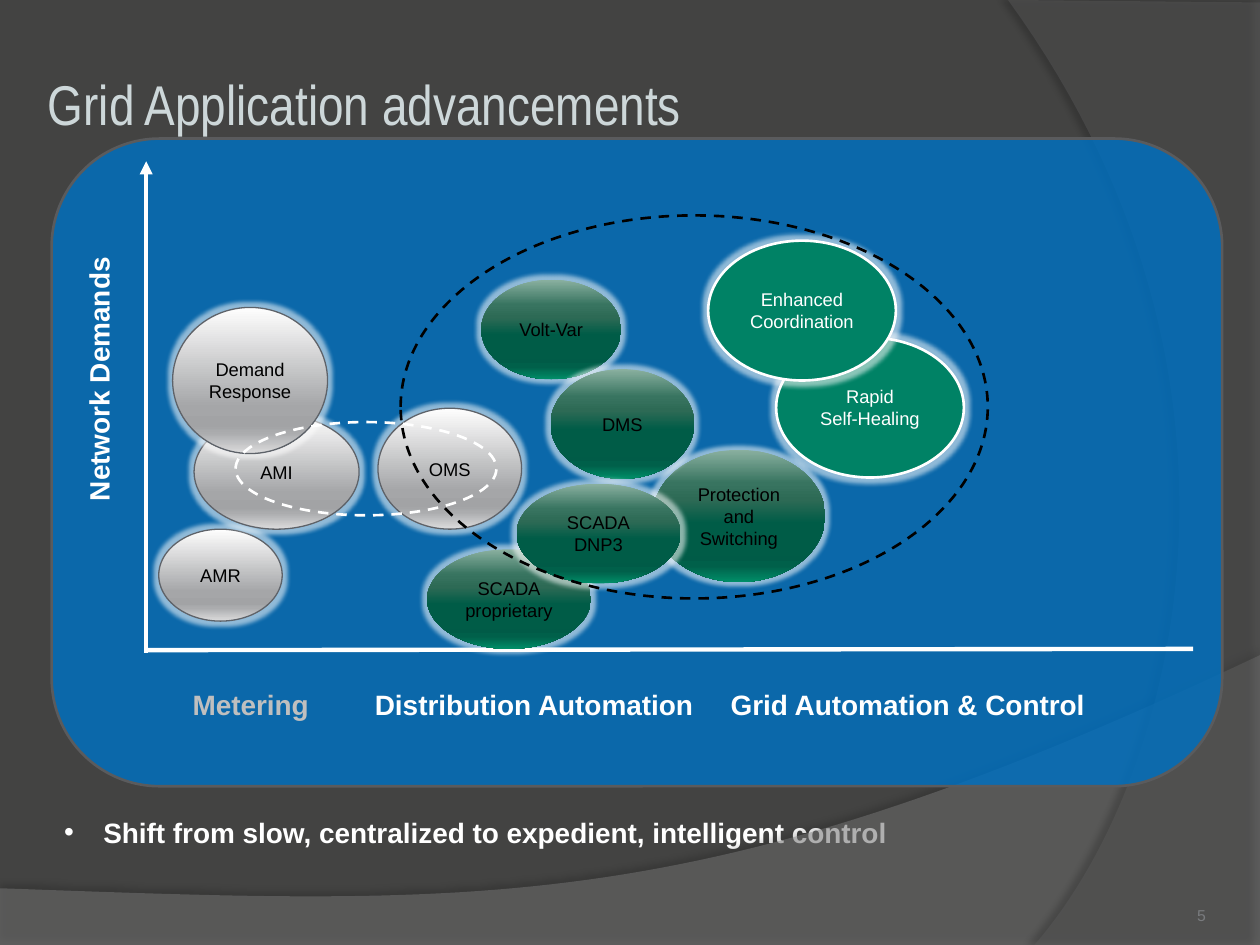
from dataclasses import dataclass

from lxml.etree import SubElement
from pptx import Presentation
from pptx.dml.color import RGBColor
from pptx.enum.dml import MSO_LINE
from pptx.enum.shapes import MSO_CONNECTOR, MSO_SHAPE
from pptx.enum.text import MSO_ANCHOR, PP_ALIGN
from pptx.oxml.ns import qn
from pptx.util import Emu, Inches, Pt

COLORS = {
    "page": "434342", "wave": "7F7F7F", "arc": "5E5E5E", "title": "CDD7D9",
    "number": "797B7E", "panel": "0070C0", "panel line": "5A5B5D",
    "white": "FFFFFF", "black": "000000", "muted": "BFBFBF",
    "silver line": "5D6269", "green": "008265",
}
GRADIENTS = {
    "silver": [(0, "FEFEFE"), (68, "A5A6A8"), (81, "A2A3A5"), (86, "ABACAE"), (100, "DCDCDD")],
    "forest": [(0, "8AB0A0"), (25, "387460"), (38, "2D6A55"), (55, "005C47"),
               (80, "005B47"), (88, "00604A"), (100, "008E68")],
}

deck = Presentation()
deck.slide_width, deck.slide_height = Inches(10), Inches(7.5)
# The page is a grid of 100 columns by 75 rows
COLUMN, ROW = deck.slide_width / 100, deck.slide_height / 75


@dataclass
class Area:
    column: float
    row: float
    columns: float
    rows: float

    def frame(self) -> tuple:
        return (Emu(round(self.column * COLUMN)), Emu(round(self.row * ROW)),
                Emu(round(self.columns * COLUMN)), Emu(round(self.rows * ROW)))


@dataclass
class Bubble:
    text: str
    area: Area
    style: str


@dataclass
class Label:
    text: str
    area: Area
    color: str = "white"
    vertical: bool = False


BUBBLES = [
    Bubble("AMR", Area(12.6, 42, 9.8, 7.3), "silver"),
    Bubble("SCADA\nproprietary", Area(33.9, 43.6, 13, 7.9), "forest"),
    Bubble("Volt-Var", Area(38.2, 22.2, 11.1, 7.9), "forest"),
    Bubble("Protection and Switching", Area(51.8, 35.7, 13.7, 10.5), "forest"),
    Bubble("AMI", Area(15.4, 32.9, 13.1, 9.1), "silver"),
    Bubble("Demand Response", Area(13.7, 24.4, 12.3, 11.6), "silver"),
    Bubble("DMS", Area(43.7, 29.3, 11.4, 8.7), "forest"),
    Bubble("OMS", Area(30, 32.4, 11.4, 9.6), "silver"),
    Bubble("Rapid\nSelf-Healing", Area(61.6, 26.8, 14.9, 11.1), "green"),
    Bubble("Enhanced\nCoordination", Area(56.2, 19.1, 14.9, 11.1), "green"),
    Bubble("SCADA\nDNP3", Area(41, 38.4, 13, 7.9), "forest"),
]
LABELS = [
    Label("Metering", Area(14.2, 54.1, 11.4, 3.7), "muted"),
    Label("Distribution Automation", Area(28.6, 54.1, 27.6, 3.7)),
    Label("Grid Automation & Control", Area(56.8, 54.1, 30.5, 3.7)),
    Label("Network Demands", Area(6, 19.8, 4.7, 20.6), vertical=True),
]
GROUPINGS = [(Area(18.7, 33.5, 20.7, 7.4), "white"), (Area(31.8, 17.1, 46.6, 30.4), "black")]


def rgb(name: str) -> RGBColor:
    return RGBColor.from_string(COLORS[name])


def add_color(parent, hex_color: str, alpha: int) -> None:
    color = SubElement(parent, qn("a:srgbClr"), val=hex_color)
    SubElement(color, qn("a:alpha"), val=str(alpha * 1000))


def fill_solid(shape, name: str, alpha: int = 100) -> None:
    shape.fill.solid()
    shape.fill.fore_color.rgb = rgb(name)
    if alpha < 100:
        color = shape._element.spPr.find(qn("a:solidFill"))[0]
        SubElement(color, qn("a:alpha"), val=str(alpha * 1000))


def fill_gradient(shape, stops: list) -> None:
    shape.fill.gradient()
    shape.fill.gradient_angle = 270
    stop_list = shape._element.spPr.find(qn("a:gradFill")).find(qn("a:gsLst"))
    for stop in list(stop_list):
        stop_list.remove(stop)
    for position, hex_color in stops:
        stop = SubElement(stop_list, qn("a:gs"), pos=str(position * 1000))
        add_color(stop, hex_color, 100)


def set_line(shape, name: str, width: float) -> None:
    shape.line.color.rgb = rgb(name)
    shape.line.width = Pt(width)


def add_effect(shape, kind: str, name: str, alpha: int, **settings: str) -> None:
    effects = shape._element.spPr.find(qn("a:effectLst"))
    add_color(SubElement(effects, qn(kind), **settings), COLORS[name], alpha)


def format_text(frame, size: float, color: str, font: str = "Arial", bold: bool = False,
                align=PP_ALIGN.CENTER) -> None:
    for para in frame.paragraphs:
        para.alignment = align
        for span in para.runs:
            span.font.name, span.font.size, span.font.bold = font, Pt(size), bold
            span.font.color.rgb = rgb(color)


def curve(start: tuple, first: tuple, second: tuple, end: tuple, steps: int = 60) -> list:
    """Points along a cubic Bezier curve, after its start."""
    points = []
    for step in range(1, steps + 1):
        t = step / steps
        points.append(tuple((1 - t) ** 3 * a + 3 * (1 - t) ** 2 * t * b + 3 * (1 - t) * t * t * c + t ** 3 * d
                            for a, b, c, d in zip(start, first, second, end)))
    return points


def add_backdrop(page, points: list, color: str, alpha: int, shade: int, distance: float, angle: int) -> None:
    builder = page.shapes.build_freeform(*[round(v * 1000) for v in points[0]], scale=COLUMN / 1000)
    builder.add_line_segments([(round(x * 1000), round(y * 1000)) for x, y in points[1:]], close=True)
    shape = builder.convert_to_shape()
    shape.shadow.inherit = False
    fill_solid(shape, color, alpha)
    shape.line.fill.background()
    add_effect(shape, "a:outerShdw", "black", shade, blurRad=str(Pt(4)), dist=str(Pt(distance)),
               dir=str(angle * 60000), algn="ctr", rotWithShape="0")


def add_axis(page, start: tuple, end: tuple, arrow: bool = False) -> None:
    axis = page.shapes.add_connector(
        MSO_CONNECTOR.STRAIGHT, *[Emu(round(v * unit)) for point in (start, end)
                                  for v, unit in zip(point, (COLUMN, ROW))])
    set_line(axis, "white", 2.5)
    if arrow:
        SubElement(axis.line._get_or_add_ln(), qn("a:headEnd"), type="triangle")
    SubElement(axis._element.spPr, qn("a:effectLst"))


def add_plain_shape(page, kind, area: Area):
    shape = page.shapes.add_shape(kind, *area.frame())
    shape.shadow.inherit = False
    return shape


def add_bubble(page, bubble: Bubble) -> None:
    shape = add_plain_shape(page, MSO_SHAPE.OVAL, bubble.area)
    if bubble.style in GRADIENTS:
        fill_gradient(shape, GRADIENTS[bubble.style])
    else:
        fill_solid(shape, bubble.style)
    if bubble.style == "silver":
        set_line(shape, "silver line", 0.75)
    elif bubble.style == "green":
        set_line(shape, "white", 1.5)
    else:
        shape.line.fill.background()
    add_effect(shape, "a:glow", "white", 55, rad=str(Pt(5)))
    shape.text_frame.text = bubble.text
    shape.text_frame.vertical_anchor = MSO_ANCHOR.MIDDLE
    format_text(shape.text_frame, 10.5, "white" if bubble.style == "green" else "black")


def add_label(page, label: Label) -> None:
    box = page.shapes.add_textbox(*label.area.frame())
    box.text_frame.text = label.text
    box.text_frame.word_wrap = False
    if label.vertical:
        box.text_frame._txBody.bodyPr.set("vert", "vert270")
    format_text(box.text_frame, 16, label.color, bold=True)


# Page and backdrop
page = deck.slides.add_slide(deck.slide_layouts[1])
page.background.fill.solid()
page.background.fill.fore_color.rgb = rgb("page")
wave = [(0, 70.5), (0, 75), (100, 75), (100, 52)] + curve((100, 52), (55.9, 72.9), (39.1, 71.9), (0, 70.5))
arc = [(100, 0.2), (100, 75), (82.1, 75)] + curve((82.1, 75), (93.5, 61.9), (101.8, 30), (80, 0))
add_backdrop(page, wave, "wave", 45, 35, 3.5, 270)
add_backdrop(page, arc, "arc", 40, 45, 4, 180)

# Title and takeaway
title, body = page.placeholders
title.left, title.top, title.width, title.height = Area(3.3, 2.4, 89.4, 12.2).frame()
frame = title.text_frame
frame.text = "Grid Application advancements"
frame.margin_left = frame.margin_right = frame.margin_top = frame.margin_bottom = Inches(0.05)
frame.vertical_anchor = MSO_ANCHOR.MIDDLE
frame.paragraphs[0].line_spacing = 0.9
format_text(frame, 32, "title", "Arial Narrow", align=PP_ALIGN.LEFT)

body.left, body.top, body.width, body.height = Area(4.1, 64.2, 92.9, 3.7).frame()
body.text_frame.text = "Shift from slow, centralized to expedient, intelligent control"
takeaway = body.text_frame.paragraphs[0]
takeaway.space_before = Pt(0)
format_text(body.text_frame, 16, "white", bold=True, align=PP_ALIGN.LEFT)
properties = takeaway._p.get_or_add_pPr()
properties.set("marL", str(Inches(0.31)))
properties.set("indent", str(-Inches(0.31)))
SubElement(properties, qn("a:buFont"), typeface="Arial")
SubElement(properties, qn("a:buChar"), char="•")

# Chart panel and axes
panel = add_plain_shape(page, MSO_SHAPE.ROUNDED_RECTANGLE, Area(4.1, 11, 92.9, 51.4))
fill_solid(panel, "panel", 83)
set_line(panel, "panel line", 1.5)
add_axis(page, (94.7, 51.5), (11.6, 51.6))
add_axis(page, (11.6, 12.8), (11.6, 51.8), arrow=True)

# Applications, axis labels and dashed groupings
for label in LABELS:
    add_label(page, label)
for bubble in BUBBLES:
    add_bubble(page, bubble)
for area, color in GROUPINGS:
    ring = add_plain_shape(page, MSO_SHAPE.OVAL, area)
    ring.fill.background()
    set_line(ring, color, 1.5)
    ring.line.dash_style = MSO_LINE.DASH

# Page number
number = page.shapes.add_textbox(*Area(90.7, 71.4, 6, 2.5).frame())
number.text_frame.text = "5"
format_text(number.text_frame, 9, "number", align=PP_ALIGN.RIGHT)

deck.save("out.pptx")
